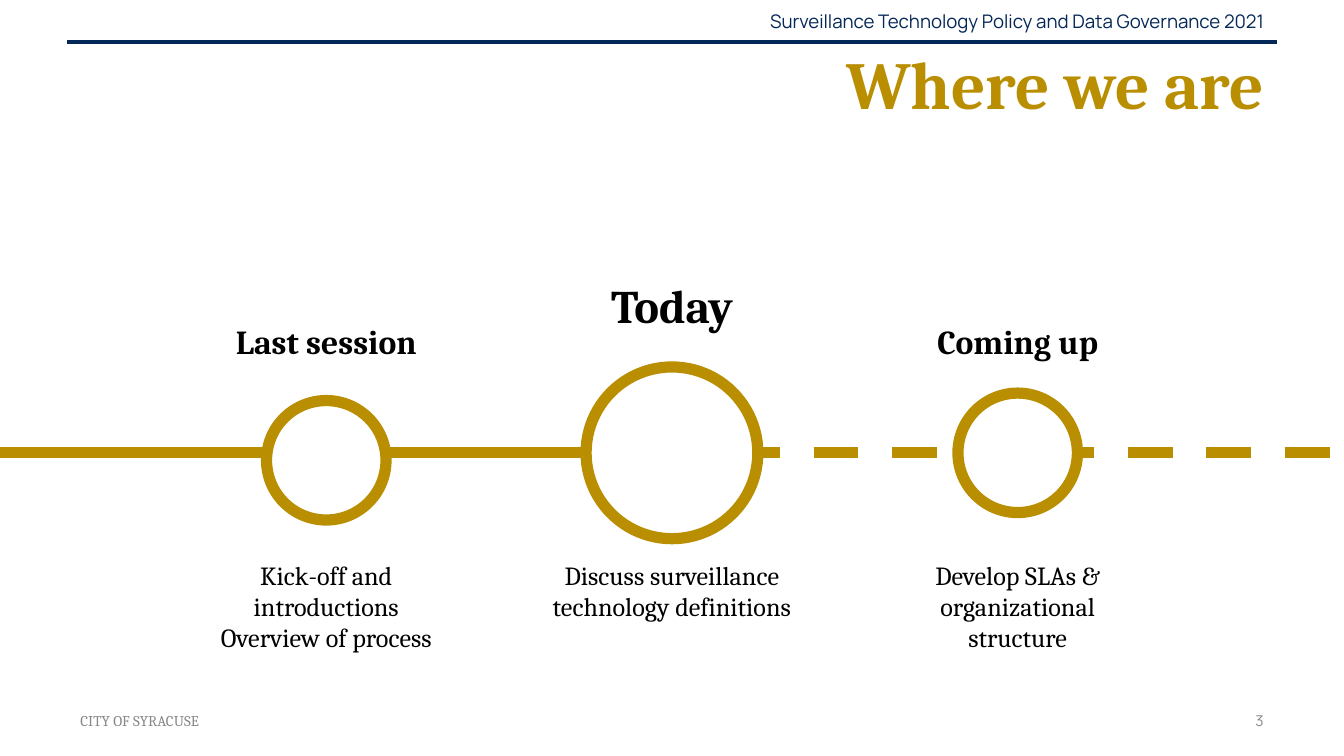
from dataclasses import dataclass

from lxml.etree import SubElement
from pptx import Presentation
from pptx.dml.color import RGBColor as Color
from pptx.enum.dml import MSO_LINE as Dash
from pptx.enum.shapes import MSO_CONNECTOR as Connector, MSO_SHAPE as Shape
from pptx.enum.text import MSO_ANCHOR as Anchor, PP_ALIGN as Align
from pptx.oxml.ns import qn
from pptx.util import Pt


@dataclass(frozen=True)
class Theme:
    """Colours, fonts and type sizes of the deck."""
    gold: str = "B98E00"
    navy: str = "062858"
    grey: str = "888888"
    black: str = "000000"
    white: str = "FFFFFF"
    serif: str = "Cambria"
    sans: str = "Manrope"
    title: float = 36
    today: float = 25
    heading: float = 18
    body: float = 14
    header: float = 10
    footer: float = 8
    thick: float = 6
    thin: float = 2.25


class SlideBuilder:
    """Draws styled elements on the current slide."""

    def __init__(self, slide, theme):
        """Keep the slide and its theme."""
        self.slide = slide
        self.theme = theme

    def text(self, words, left, top, width, height, size, color, font=None,
             bold=False, align=Align.CENTER, anchor=Anchor.MIDDLE, inset=3.6):
        """Add a wrapped text box, one paragraph per line of words."""
        box = self.slide.shapes.add_textbox(Pt(left), Pt(top), Pt(width), Pt(height))
        frame = box.text_frame
        frame.word_wrap = True
        frame.vertical_anchor = anchor
        frame.margin_left = frame.margin_right = Pt(7.2)
        frame.margin_top = frame.margin_bottom = Pt(inset)
        frame.text = words
        for para in frame.paragraphs:
            para.alignment = align
            for span in para.runs:
                span.font.name = font or self.theme.serif
                span.font.size = Pt(size)
                span.font.bold = bold
                span.font.color.rgb = Color.from_string(color)

    def line(self, start, end, y, color, weight, dash=None):
        """Add a horizontal line, dashed on request."""
        line = self.slide.shapes.add_connector(
            Connector.STRAIGHT, Pt(start), Pt(y), Pt(end), Pt(y))
        line.line.color.rgb = Color.from_string(color)
        line.line.width = Pt(weight)
        if dash:
            line.line.dash_style = dash
        SubElement(line._element.spPr, qn("a:effectLst"))

    def ring(self, center, middle, size):
        """Add a white circle with a thick gold outline."""
        ring = self.slide.shapes.add_shape(
            Shape.OVAL, Pt(center - size / 2), Pt(middle - size / 2), Pt(size), Pt(size))
        ring.shadow.inherit = False
        ring.fill.solid()
        ring.fill.fore_color.rgb = Color.from_string(self.theme.white)
        ring.line.color.rgb = Color.from_string(self.theme.gold)
        ring.line.width = Pt(self.theme.thick)

    def milestone(self, center, middle, size, heading, heading_top, heading_size, caption):
        """Add a ring with its heading above and its caption below."""
        width = 152.6
        left = center - width / 2
        self.ring(center, middle, size)
        self.text(heading, left, heading_top, width, 36, heading_size, self.theme.black,
                  bold=True, anchor=Anchor.TOP, inset=7.2)
        self.text(caption, left, 292.3, width, 48, self.theme.body, self.theme.black,
                  anchor=Anchor.TOP, inset=7.2)


def main():
    """Build the timeline slide and save the deck."""
    theme = Theme()
    deck = Presentation()
    deck.slide_width, deck.slide_height = Pt(720), Pt(405)
    page = SlideBuilder(deck.slides.add_slide(deck.slide_layouts[6]), theme)

    page.text("Surveillance Technology Policy and Data Governance 2021", 375, 0.7, 309, 21.6,
              theme.header, theme.navy, theme.sans, align=Align.RIGHT)
    page.line(36, 684, 22.5, theme.navy, theme.thin)
    page.text("Where we are", 360, 21, 324, 46, theme.title, theme.gold,
              bold=True, align=Align.RIGHT)
    page.text("CITY OF SYRACUSE", 36, 375, 168, 21.6, theme.footer, theme.grey,
              align=Align.LEFT)
    page.text("3", 516, 375, 168, 21.6, theme.footer, theme.grey, theme.sans,
              align=Align.RIGHT)

    axis, middle, step = 242.6, 360, 185.2
    page.line(-0.7, 314, axis, theme.gold, theme.thick)
    page.line(393.8, 721.4, axis, theme.gold, theme.thick, Dash.DASH)
    page.milestone(middle - step, axis + 4, 64, "Last session", 165, theme.heading,
                   "Kick-off and introductions\nOverview of process")
    page.milestone(middle, axis, 92, "Today", 141, theme.today,
                   "Discuss surveillance technology definitions")
    page.milestone(middle + step, axis, 64, "Coming up", 165, theme.heading,
                   "Develop SLAs & organizational structure")
    deck.save("out.pptx")


if __name__ == "__main__":
    main()
